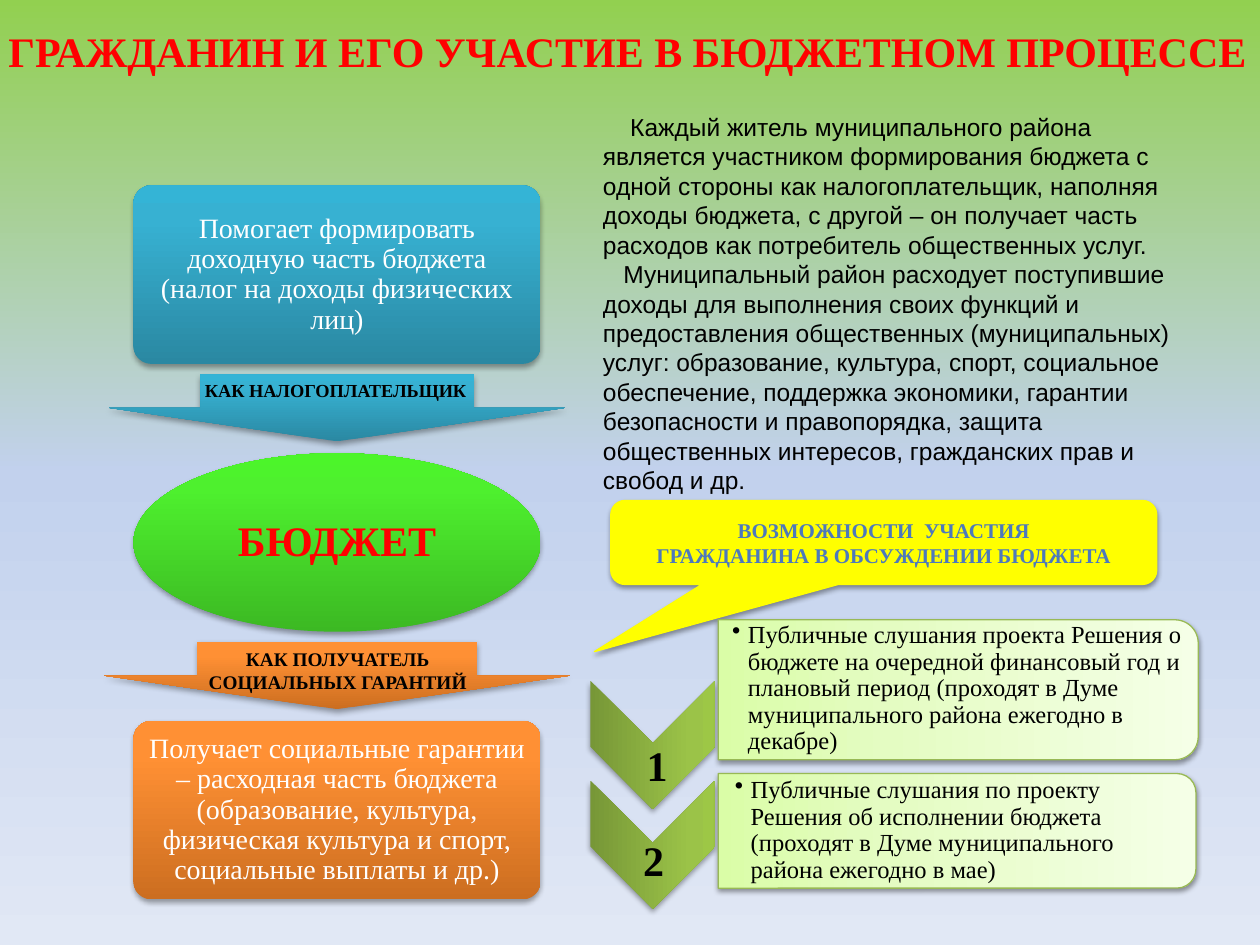
from dataclasses import dataclass

import pptx
import pptx.dml.color
import pptx.enum.shapes
import pptx.enum.text
import pptx.oxml.ns
import pptx.util
from lxml import etree

Pt = pptx.util.Pt
Kind = pptx.enum.shapes.MSO_SHAPE
Align = pptx.enum.text.PP_ALIGN
Anchor = pptx.enum.text.MSO_ANCHOR
qn = pptx.oxml.ns.qn

SERIF = "Times New Roman"
RED, BLACK, WHITE = "FF0000", "000000", "FFFFFF"
SKY = [(0, "92D050"), (50, "C2D1ED"), (100, "E1E8F5")]
TEAL = [(0, "2A88A2"), (80, "37B1D2"), (100, "34B4D6")]
GREEN = [(0, "3CB923"), (80, "4EF02E"), (100, "4CF52A")]
AMBER = [(0, "CC6E20"), (80, "FF9034"), (100, "FF9136")]
OLIVE = [(0, "779737"), (80, "9BC348"), (100, "9DC746")]
LIME = [(0, "DAFDA7"), (35, "E4FCC2"), (100, "F5FFE7")]
STEEL = [(0, "7494C9"), (49, "4D79BC"), (50, "346AAA"), (92, "325F94"), (100, "315D91")]


@dataclass
class Box:
    left: float
    top: float
    wide: float
    high: float


@dataclass
class Style:
    size: float
    color: str = BLACK
    bold: bool = False
    face: str = SERIF
    align: Align = Align.CENTER
    space: float = 1.0
    anchor: Anchor = Anchor.TOP
    pads: tuple = (7.2, 3.6, 7.2, 3.6)


@dataclass
class Block:
    kind: Kind
    ramp: list
    text: str
    style: Style


@dataclass
class Arrow:
    box: Box
    ramp: list
    label: str
    place: Box
    style: Style


@dataclass
class Step:
    top: float
    digit: str
    spot: Box
    panel: Box
    text: str
    place: Box


def rgb(color: str):
    return pptx.dml.color.RGBColor.from_string(color)


def blend(fill, node, ramp: list, angle: int, turn: bool = True) -> None:
    """Fill with a ramp of stops; angle runs clockwise, turn follows rotation."""
    fill.gradient()
    grad = node.find(".//" + qn("a:gradFill"))
    grad.set("rotWithShape", str(int(turn)))
    stops = grad.find(qn("a:gsLst"))
    for old in list(stops):
        stops.remove(old)
    for at, color in ramp:
        stop = etree.SubElement(stops, qn("a:gs"), pos=str(at * 1000))
        etree.SubElement(stop, qn("a:srgbClr"), val=color)
    grad.find(qn("a:lin")).set("ang", str(angle * 60000))


def shade(shape, alpha: int, gap: float) -> None:
    shape.shadow.inherit = False
    holder = shape.element.spPr.find(qn("a:effectLst"))
    drop = etree.SubElement(holder, qn("a:outerShdw"), blurRad=str(Pt(3.1)),
                            dist=str(Pt(gap)), dir="5400000", rotWithShape="0")
    color = etree.SubElement(drop, qn("a:srgbClr"), val=BLACK)
    etree.SubElement(color, qn("a:alpha"), val=str(alpha * 1000))


def draw(slide, kind: Kind, box: Box, fill, edge: str = "", adjust: tuple = (),
         turned: bool = False, follow: bool = True):
    """Add a shape that covers box, also when it is turned by 90 degrees."""
    wide, high = (box.high, box.wide) if turned else (box.wide, box.high)
    left = box.left + (box.wide - wide) / 2
    top = box.top + (box.high - high) / 2
    shape = slide.shapes.add_shape(kind, Pt(left), Pt(top), Pt(wide), Pt(high))
    shape.rotation = 90 if turned else 0
    for index, value in enumerate(adjust):
        shape.adjustments[index] = value
    if isinstance(fill, str):
        shape.fill.solid()
        shape.fill.fore_color.rgb = rgb(fill)
    else:
        blend(shape.fill, shape.element.spPr, fill, 270, follow)
    if edge:
        shape.line.color.rgb = rgb(edge)
        shape.line.width = Pt(0.75)
        shade(shape, 38, 1.6)
    else:
        shape.line.fill.background()
        shade(shape, 35, 1.8)
    return shape


def write(shape, lines: list, style: Style) -> None:
    frame = shape.text_frame
    frame.word_wrap = True
    frame.auto_size = pptx.enum.text.MSO_AUTO_SIZE.NONE
    frame.vertical_anchor = style.anchor
    (frame.margin_left, frame.margin_top,
     frame.margin_right, frame.margin_bottom) = map(Pt, style.pads)
    for index, line in enumerate(lines):
        para = frame.paragraphs[0] if index == 0 else frame.add_paragraph()
        para.alignment = style.align
        para.line_spacing = style.space
        run = para.add_run()
        run.text = line
        run.font.name = style.face
        run.font.size = Pt(style.size)
        run.font.bold = style.bold
        run.font.color.rgb = rgb(style.color)


def note(slide, box: Box, lines: list, style: Style):
    shape = slide.shapes.add_textbox(Pt(box.left), Pt(box.top), Pt(box.wide), Pt(box.high))
    write(shape, lines, style)
    return shape


def indent(para, first: float, left: float = 0, mark: str = "") -> None:
    props = para._p.get_or_add_pPr()
    props.set("marL", str(Pt(left)))
    props.set("indent", str(Pt(first)))
    if mark:
        etree.SubElement(props, qn("a:buChar"), char=mark)


MID = Anchor.MIDDLE
CARD = Style(16, WHITE, space=0.9, anchor=MID, pads=(5,) * 4)
HUB = Style(24, RED, True, space=0.9, anchor=MID, pads=(7,) * 4)
DIGIT = Style(24, bold=True, space=0.9, anchor=MID, pads=(1.5,) * 4)
ITEM = Style(14, align=Align.LEFT, space=0.9, anchor=MID, pads=(8, 1, 1, 1))

BLOCKS = [
    Block(Kind.ROUNDED_RECTANGLE, TEAL,
          "Помогает формировать доходную часть бюджета (налог на доходы физических лиц)", CARD),
    Block(Kind.OVAL, GREEN, "БЮДЖЕТ", HUB),
    Block(Kind.ROUNDED_RECTANGLE, AMBER,
          "Получает социальные гарантии – расходная часть бюджета (образование, культура, "
          "физическая культура и спорт, социальные выплаты и др.)", CARD),
]
ARROWS = [
    Arrow(Box(62.3, 214, 260.6, 38.2), TEAL, "КАК НАЛОГОПЛАТЕЛЬЩИК",
          Box(110, 213, 176, 20), Style(10.5, bold=True, align=Align.LEFT)),
    Arrow(Box(59.4, 367, 266.4, 38.2), AMBER, "КАК ПОЛУЧАТЕЛЬ СОЦИАЛЬНЫХ ГАРАНТИЙ",
          Box(105, 366.5, 176, 34), Style(11, bold=True)),
]
STEPS = [
    Step(389, "1", Box(342, 425.5, 67, 26), Box(410.4, 354.2, 274.3, 80),
         "Публичные слушания проекта Решения о бюджете на очередной финансовый год и "
         "плановый период (проходят в Думе муниципального района ежегодно в декабре)",
         Box(410.4, 365, 270, 57)),
    Step(446, "2", Box(338, 482.5, 71, 21.5), Box(410.4, 442, 273, 65.5),
         "Публичные слушания по проекту Решения об исполнении бюджета "
         "(проходят в Думе муниципального района ежегодно в мае)",
         Box(412, 445, 268.6, 59)),
]
INTRO = [
    "Каждый житель муниципального района является участником формирования бюджета с одной "
    "стороны как налогоплательщик, наполняя доходы бюджета, с другой – он получает часть "
    "расходов как потребитель общественных услуг.",
    "Муниципальный район расходует поступившие доходы для выполнения своих функций и "
    "предоставления общественных (муниципальных) услуг: образование, культура, спорт, "
    "социальное обеспечение, поддержка экономики, гарантии безопасности и правопорядка, "
    "защита общественных интересов, гражданских прав и свобод и др.",
]


def main() -> None:
    deck = pptx.Presentation()
    deck.slide_width, deck.slide_height = Pt(720), Pt(540)
    slide = deck.slides.add_slide(deck.slide_layouts[5])
    blend(slide.background.fill, slide.element, SKY, 90)

    title = slide.shapes.title
    title.left, title.top, title.width, title.height = map(Pt, (-4.3, 11, 726, 34))
    write(title, ["ГРАЖДАНИН И ЕГО УЧАСТИЕ В БЮДЖЕТНОМ ПРОЦЕССЕ"], Style(24, RED, True))

    intro = note(slide, Box(337.5, 60.5, 340, 245), INTRO,
                 Style(14, face="Arial", align=Align.LEFT))
    for para, first in zip(intro.text_frame.paragraphs, (15.6, 11.7)):
        indent(para, first)

    for index, block in enumerate(BLOCKS):
        box = Box(76.3, 106 + 153 * index, 232.6, 102)
        adjust = () if block.kind == Kind.OVAL else (0.1,)
        write(draw(slide, block.kind, box, block.ramp, adjust=adjust), [block.text], block.style)

    for arrow in ARROWS:
        draw(slide, Kind.RIGHT_ARROW, arrow.box, arrow.ramp, adjust=(0.6, 0.5),
             turned=True, follow=False)
        note(slide, arrow.place, [arrow.label], arrow.style)

    call = draw(slide, Kind.ROUNDED_RECTANGULAR_CALLOUT, Box(349, 286, 312, 48), "FFFF00",
                "FFFF00", (-0.53, 1.3, 0.17))
    write(call, ["ВОЗМОЖНОСТИ  УЧАСТИЯ", "ГРАЖДАНИНА В ОБСУЖДЕНИИ БЮДЖЕТА"],
          Style(12, bold=True, anchor=MID))
    for para in call.text_frame.paragraphs:
        run = para.runs[0]
        blend(run.font.fill, run._r, STEEL, 90)

    for step in STEPS:
        draw(slide, Kind.CHEVRON, Box(337.3, step.top, 71.3, 73.4), OLIVE,
             adjust=(0.5,), turned=True)
        note(slide, step.spot, [step.digit], DIGIT)
        draw(slide, Kind.ROUND_2_SAME_RECTANGLE, step.panel, LIME, "98B955", turned=True)
        item = note(slide, step.place, [step.text], ITEM)
        indent(item.text_frame.paragraphs[0], -9, 9, "•")

    deck.save("out.pptx")


if __name__ == "__main__":
    main()
